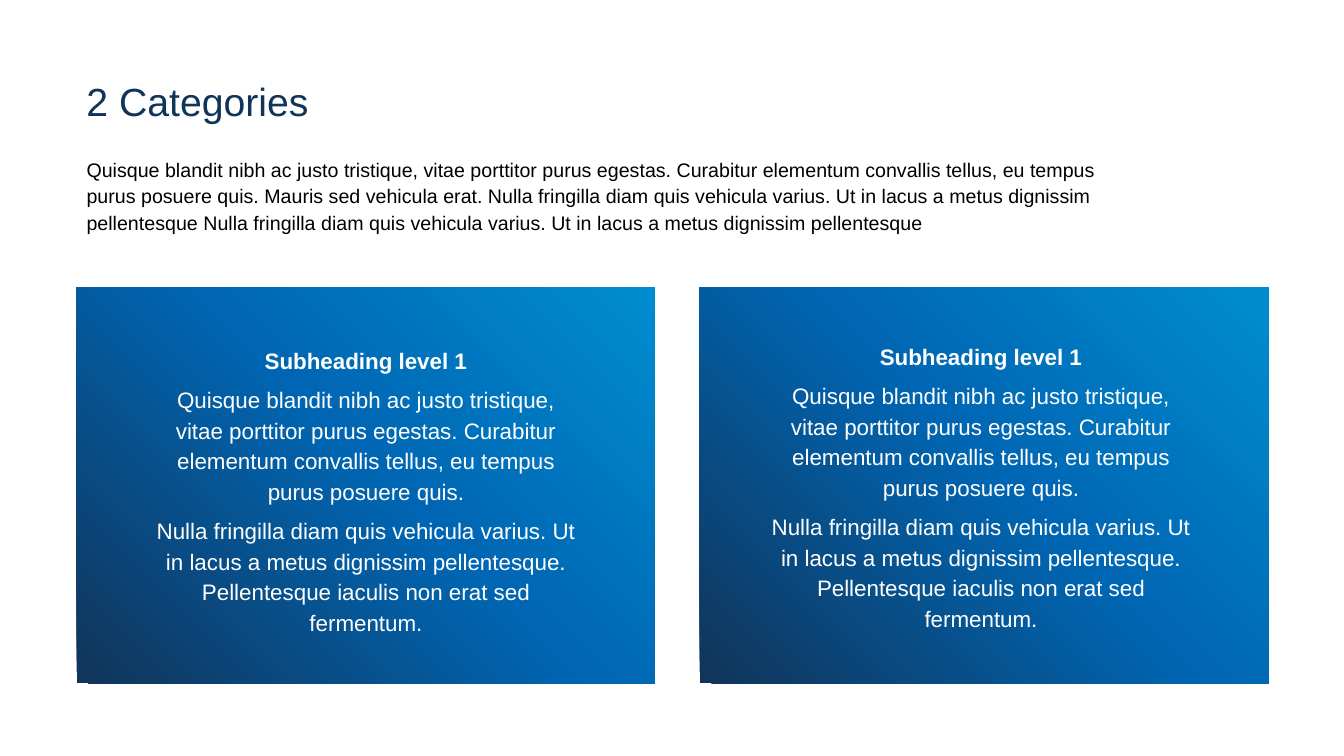
from pptx import Presentation
from pptx.enum import shapes, text
from pptx.oxml import parse_xml
from pptx.oxml.ns import nsdecls, qn
from pptx.dml.color import RGBColor
from pptx.util import Inches, Pt

COLORS = {"sky": "008DD0", "blue": "0066B3", "navy": "113459",
          "white": "FFFFFF", "black": "000000"}
GRADIENT = [(0, "sky"), (47, "blue"), (100, "navy")]

INTRO = ("Quisque blandit nibh ac justo tristique, vitae porttitor purus egestas. "
         "Curabitur elementum convallis tellus, eu tempus purus posuere quis. "
         "Mauris sed vehicula erat. Nulla fringilla diam quis vehicula varius. "
         "Ut in lacus a metus dignissim pellentesque Nulla fringilla diam quis "
         "vehicula varius. Ut in lacus a metus dignissim pellentesque")
CATEGORY = [
    "Subheading level 1",
    "Quisque blandit nibh ac justo tristique, vitae porttitor purus egestas. "
    "Curabitur elementum convallis tellus, eu tempus purus posuere quis.",
    "Nulla fringilla diam quis vehicula varius. Ut in lacus a metus dignissim "
    "pellentesque. Pellentesque iaculis non erat sed fermentum.",
]


def add_text(box, paragraphs, size, color, align=text.PP_ALIGN.LEFT, bold_first=False):
    frame = slide.shapes.add_textbox(*map(Inches, box)).text_frame
    frame.word_wrap = True
    for i, words in enumerate(paragraphs):
        paragraph = frame.add_paragraph() if i else frame.paragraphs[0]
        paragraph.alignment = align
        paragraph.line_spacing = 1.14
        paragraph.space_before = Pt(6 if i else 0)
        run = paragraph.add_run()
        run.text = words
        style = {"name": "Arial", "size": Pt(size), "bold": bold_first and i == 0}
        for key, value in style.items():
            setattr(run.font, key, value)
        run.font.color.rgb = RGBColor.from_string(COLORS[color])


def fill_radial(panel):
    """Circular gradient spreading from the top right corner."""
    panel.fill.gradient()
    stops = "".join(f'<a:gs pos="{pos * 1000}"><a:srgbClr val="{COLORS[name]}"/></a:gs>'
                    for pos, name in GRADIENT)
    radial = parse_xml(
        f'<a:gradFill {nsdecls("a")} rotWithShape="1"><a:gsLst>{stops}</a:gsLst>'
        '<a:path path="circle"><a:fillToRect l="100000" b="100000"/></a:path></a:gradFill>')
    properties = panel._element.spPr
    properties.replace(properties.find(qn("a:gradFill")), radial)


prs = Presentation()
prs.slide_width, prs.slide_height = Inches(13.33), Inches(7.5)
slide = prs.slides.add_slide(prs.slide_layouts[6])

# Heading and introduction
add_text((0.76, 0.65, 6.67, 0.64), ["2 Categories"], 28, "navy")
add_text((0.76, 1.48, 10.65, 0.88), [INTRO], 14, "black")

# Category panels: panel left and width, text left and top
for left, width, text_left, text_top in [(0.76, 5.73, 1.45, 3.36), (6.94, 5.64, 7.55, 3.32)]:
    panel = slide.shapes.add_shape(shapes.MSO_SHAPE.RECTANGLE, Inches(left), Inches(2.85),
                                   Inches(width), Inches(3.93))
    panel.shadow.inherit = False
    panel.line.fill.background()
    fill_radial(panel)
    add_text((text_left, text_top, 4.36, 3.42), CATEGORY, 16, "white",
             text.PP_ALIGN.CENTER, bold_first=True)

prs.save("out.pptx")
